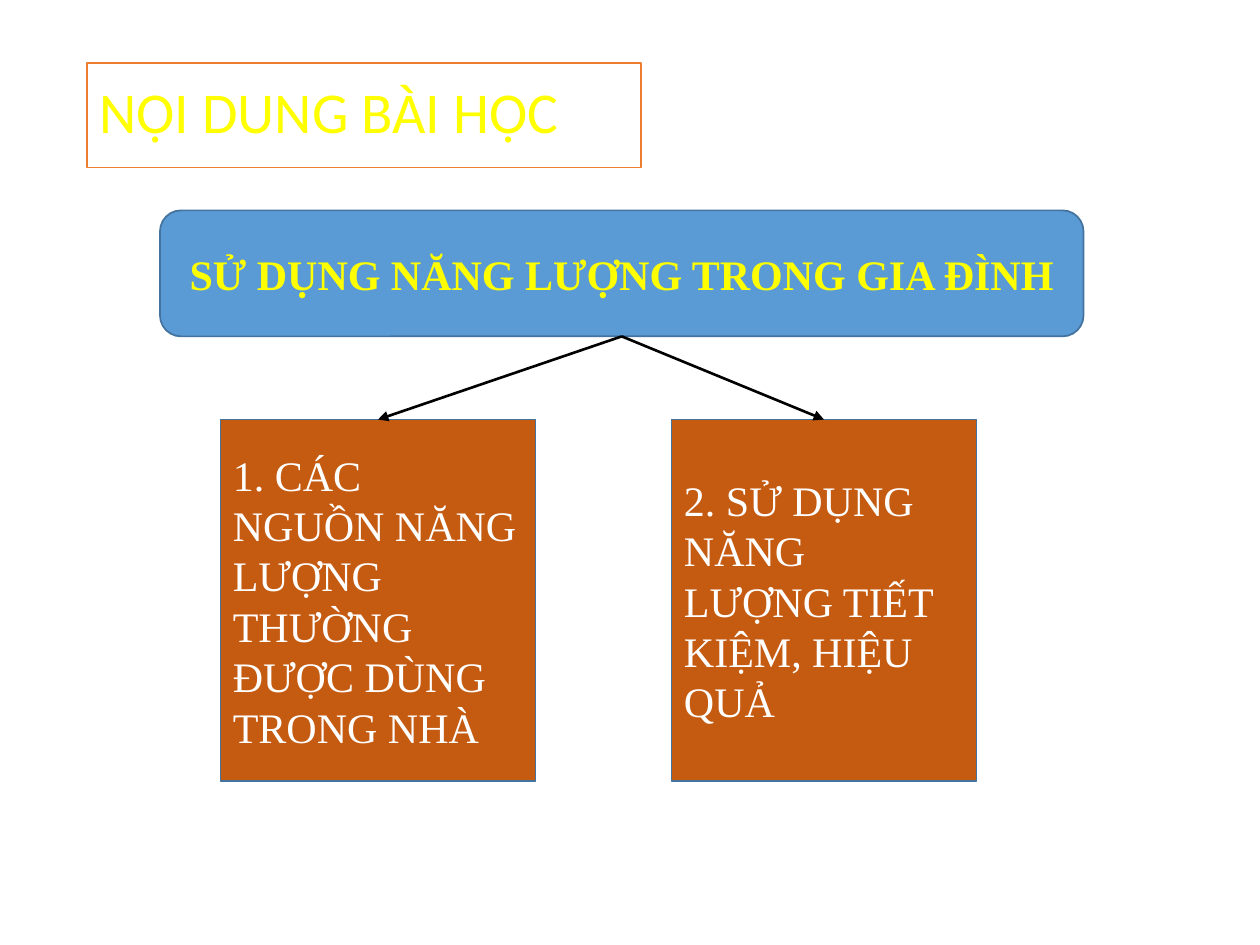
from dataclasses import dataclass

from lxml.etree import SubElement
from pptx import Presentation
from pptx.dml.color import RGBColor
from pptx.enum.shapes import MSO_CONNECTOR, MSO_SHAPE
from pptx.enum.text import MSO_ANCHOR, PP_ALIGN
from pptx.oxml.ns import qn
from pptx.shapes.autoshape import Shape
from pptx.slide import Slide
from pptx.util import Inches, Pt


@dataclass(frozen=True)
class Theme:
    white: str = "FFFFFF"
    yellow: str = "FFFF00"
    orange: str = "ED7D31"
    brown: str = "C55A11"
    blue: str = "5B9BD5"
    outline: str = "43739E"
    arrow: str = "000000"
    title_font: str = "Calibri"
    body_font: str = "Times New Roman"
    title_size: int = 33
    body_size: int = 24


T = Theme()


@dataclass(frozen=True)
class Box:
    text: str
    left: float
    top: float
    width: float
    height: float
    fill: str = T.brown
    line: str = T.outline
    color: str = T.white
    font: str = T.body_font
    size: int = T.body_size
    bold: bool = False
    align: PP_ALIGN = PP_ALIGN.LEFT
    spacing: float = 1.0
    kind: MSO_SHAPE = MSO_SHAPE.RECTANGLE


TITLE = Box("NỘI DUNG BÀI HỌC", 0.69, 0.5, 4.4, 0.83, fill=T.white,
            line=T.orange, color=T.yellow, font=T.title_font,
            size=T.title_size, spacing=0.9)
TOPIC = Box("SỬ DỤNG NĂNG LƯỢNG TRONG GIA ĐÌNH", 1.27, 1.67, 7.33, 1,
            fill=T.blue, color=T.yellow, bold=True, align=PP_ALIGN.CENTER,
            kind=MSO_SHAPE.ROUNDED_RECTANGLE)
PARTS = (
    Box("1. CÁC NGUỒN NĂNG LƯỢNG THƯỜNG ĐƯỢC DÙNG TRONG NHÀ",
        1.75, 3.33, 2.5, 2.87),
    Box("2. SỬ DỤNG NĂNG LƯỢNG TIẾT KIỆM, HIỆU QUẢ",
        5.33, 3.33, 2.42, 2.87),
)


def add_box(s: Slide, box: Box) -> Shape:
    sp = s.shapes.add_shape(box.kind, Inches(box.left), Inches(box.top),
                            Inches(box.width), Inches(box.height))
    sp.shadow.inherit = False
    sp.fill.solid()
    sp.fill.fore_color.rgb = RGBColor.from_string(box.fill)
    sp.line.color.rgb = RGBColor.from_string(box.line)
    sp.line.width = Pt(1)

    tf = sp.text_frame
    tf.word_wrap = True
    tf.vertical_anchor = MSO_ANCHOR.MIDDLE
    p = tf.paragraphs[0]
    p.alignment = box.align
    p.line_spacing = box.spacing
    r = p.add_run()
    r.text = box.text
    r.font.name = box.font
    r.font.size = Pt(box.size)
    r.font.bold = box.bold
    r.font.color.rgb = RGBColor.from_string(box.color)
    return sp


def add_arrow(s: Slide, parent: Shape, child: Shape) -> None:
    """Join the bottom centre of parent to the top centre of child."""
    cx = s.shapes.add_connector(MSO_CONNECTOR.STRAIGHT, 0, 0, 0, 0)
    cx.begin_connect(parent, 2)
    cx.end_connect(child, 0)
    cx.line.color.rgb = RGBColor.from_string(T.arrow)
    cx.line.width = Pt(1.5)
    SubElement(cx.line._get_or_add_ln(), qn("a:tailEnd"), type="triangle")
    SubElement(cx._element.spPr, qn("a:effectLst"))


def main() -> None:
    prs = Presentation()
    prs.slide_width, prs.slide_height = Inches(10), Inches(7.5)
    s = prs.slides.add_slide(prs.slide_layouts[6])

    # Title and main topic
    add_box(s, TITLE)
    topic = add_box(s, TOPIC)

    # Lesson parts, each reached by an arrow from the topic
    parts = [add_box(s, part) for part in PARTS]
    for part in parts:
        add_arrow(s, topic, part)

    prs.save("out.pptx")


if __name__ == "__main__":
    main()
